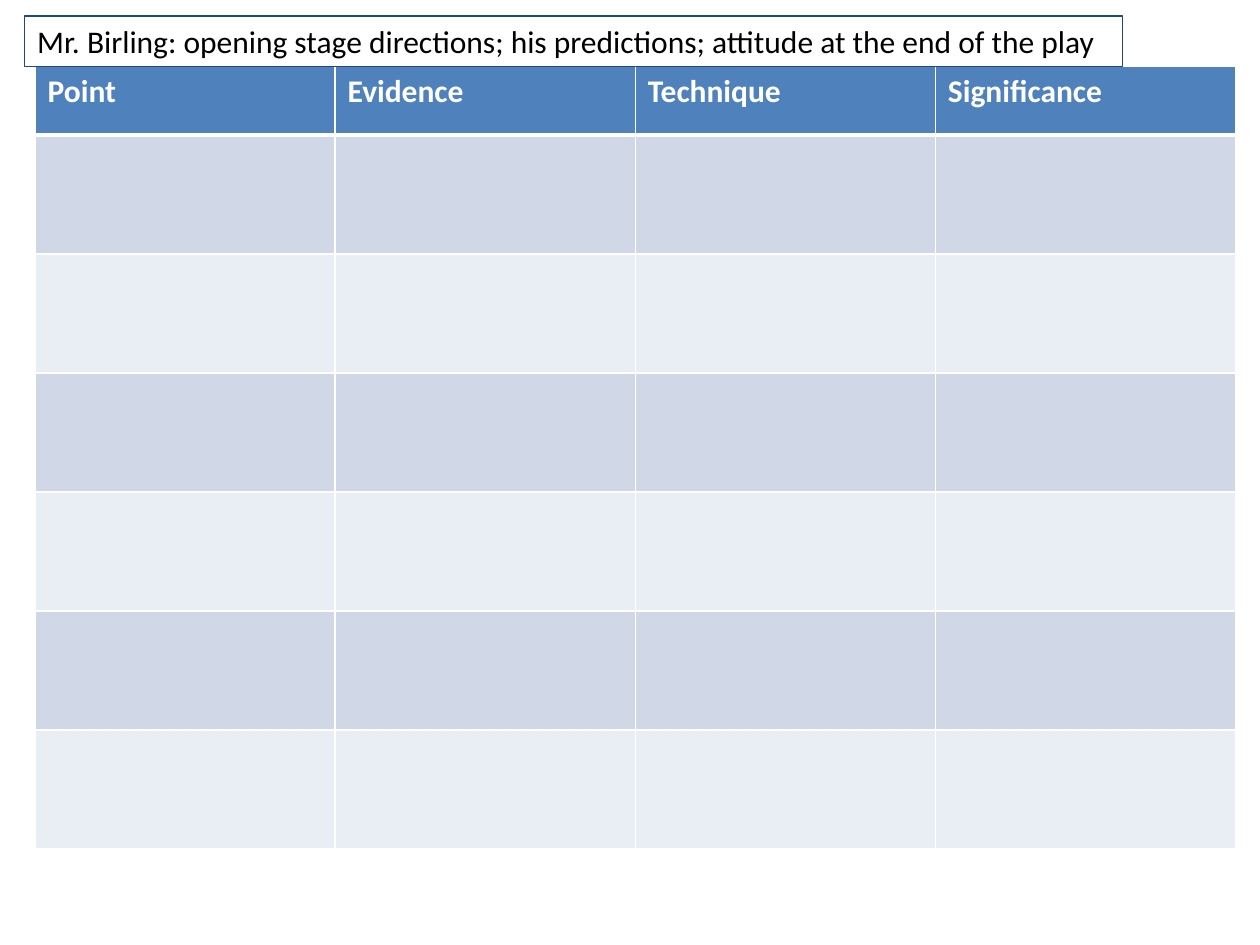
from lxml import etree
from pptx import Presentation
from pptx import util as u
from pptx.dml.color import RGBColor
from pptx.enum import text
from pptx.oxml import ns

COLOURS = {
    "text": "000000",
    "outline": "1F497D",
    "header": "4F81BD",
    "header_text": "FFFFFF",
    "grid": "FFFFFF",
    "odd_row": "D0D8E8",
    "even_row": "E9EDF4",
}
TITLE = ("Mr. Birling: opening stage directions; his predictions; "
         "attitude at the end of the play")
HEADINGS = ["Point", "Evidence", "Technique", "Significance"]
BLANK_ROWS = 6


def colour(name):
    return RGBColor.from_string(COLOURS[name])


class SlideBuilder:
    """Holds the text style and the slide being built."""

    font_name = "Calibri"
    font_size = u.Pt(18)

    def __init__(self, slide):
        self.slide = slide

    def style(self, paragraph, colour_name, bold=False):
        font = paragraph.font
        font.name, font.size, font.bold = self.font_name, self.font_size, bold
        font.color.rgb = colour(colour_name)

    def outlined_text(self, words, left, top, width, height):
        box = self.slide.shapes.add_textbox(
            u.Pt(left), u.Pt(top), u.Pt(width), u.Pt(height))
        box.line.color.rgb = colour("outline")
        box.line.width = u.Pt(0.75)
        frame = box.text_frame
        frame.word_wrap = False
        frame.auto_size = text.MSO_AUTO_SIZE.SHAPE_TO_FIT_TEXT
        frame.text = words
        self.style(frame.paragraphs[0], "text")

    def borders(self, cell, top=1, bottom=1):
        """Draw the four cell edges; must run before the cell is filled."""
        properties = cell._tc.get_or_add_tcPr()
        for side, width in (("L", 1), ("R", 1), ("T", top), ("B", bottom)):
            line = etree.SubElement(properties, ns.qn(f"a:ln{side}"), w=str(u.Pt(width)))
            fill = etree.SubElement(line, ns.qn("a:solidFill"))
            etree.SubElement(fill, ns.qn("a:srgbClr"), val=COLOURS["grid"])

    def table(self, headings, blank_rows, left, top, column_width,
              header_height, row_height):
        frame = self.slide.shapes.add_table(
            blank_rows + 1, len(headings), u.Pt(left), u.Pt(top),
            u.Pt(column_width * len(headings)),
            u.Pt(header_height + row_height * blank_rows))
        table = frame.table
        for column in table.columns:
            column.width = u.Pt(column_width)
        for index, row in enumerate(table.rows):
            row.height = u.Pt(row_height if index else header_height)
            band = "odd_row" if index % 2 else "even_row"
            for cell, heading in zip(row.cells, headings):
                self.borders(cell, top=3 if index == 1 else 1,
                             bottom=1 if index else 3)
                cell.fill.solid()
                cell.fill.fore_color.rgb = colour(band if index else "header")
                if index == 0:
                    cell.text = heading
                    self.style(cell.text_frame.paragraphs[0], "header_text", bold=True)


def main():
    presentation = Presentation()
    presentation.slide_width, presentation.slide_height = u.Pt(720), u.Pt(540)
    builder = SlideBuilder(presentation.slides.add_slide(presentation.slide_layouts[6]))
    builder.table(HEADINGS, BLANK_ROWS, left=20, top=37.7, column_width=171.5,
                  header_height=39.5, row_height=68)
    builder.outlined_text(TITLE, left=14.2, top=9.2, width=627.2, height=29)
    presentation.save("out.pptx")


if __name__ == "__main__":
    main()
